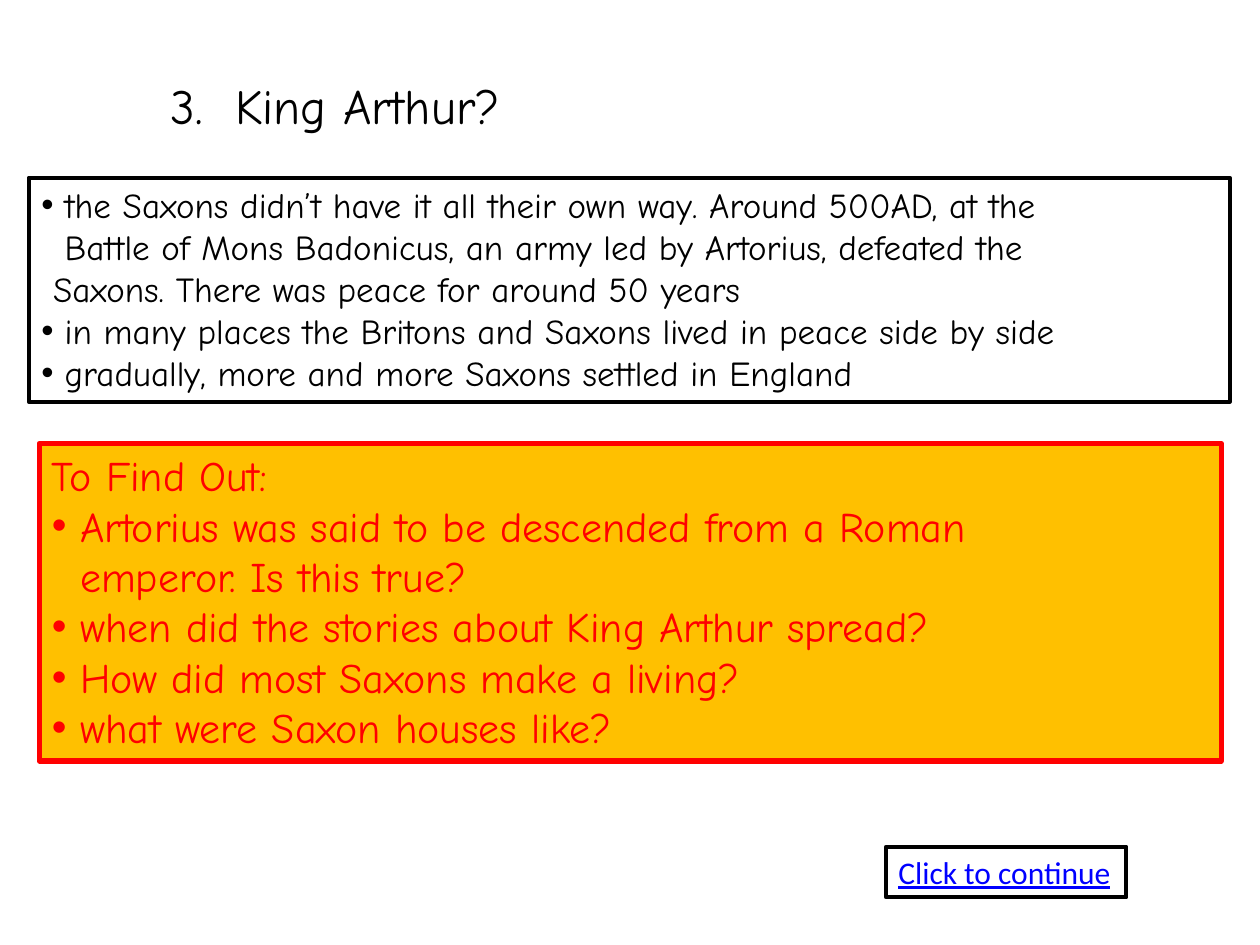
from dataclasses import dataclass
from typing import Optional

from lxml import etree
from pptx import Presentation
from pptx.dml.color import RGBColor
from pptx.enum.text import MSO_ANCHOR, MSO_AUTO_SIZE, PP_ALIGN
from pptx.oxml.ns import qn
from pptx.util import Cm, Pt

TOP = MSO_ANCHOR.TOP
FIXED = MSO_AUTO_SIZE.NONE
LEFT = PP_ALIGN.LEFT


@dataclass(frozen=True)
class Theme:
    hand: str = "Comic Neue"
    plain: str = "Calibri"
    mark: str = "Arial"
    black: str = "000000"
    red: str = "FF0000"
    gold: str = "FFC000"
    blue: str = "0000FF"
    title: int = 28
    facts: int = 20
    tasks: int = 24
    button: int = 18


THEME = Theme()


@dataclass(frozen=True)
class Line:
    text: str
    indent: float = 0
    bullet: bool = False


@dataclass(frozen=True)
class Box:
    left: float
    top: float
    width: float
    height: float
    size: int
    color: str
    lines: tuple[Line, ...]
    font: str = THEME.hand
    fill: Optional[str] = None
    edge: Optional[str] = None
    weight: float = 2.25
    wrap: bool = True
    under: bool = False


def points(indent: float, *texts: str) -> tuple[Line, ...]:
    return tuple(Line(text, indent, True) for text in texts)


FACT = 0.47
TASK = 0.57

TITLE = Box(3.18, 1.4, 16.08, 1.45, THEME.title, THEME.black,
            (Line("3.  King Arthur?"),))
FACTS = Box(
    0.58, 3.58, 24.21, 4.52, THEME.facts, THEME.black,
    (
        *points(FACT, "the Saxons didn’t have it all their own way. "
                      "Around 500AD, at the"),
        Line("Battle of Mons Badonicus, an army led by Artorius, "
             "defeated the", FACT),
        Line("Saxons. There was peace for around 50 years", FACT / 2),
        *points(FACT,
                "in many places the Britons and Saxons lived in peace "
                "side by side",
                "gradually, more and more Saxons settled in England"),
    ),
    edge=THEME.black,
)
TASKS = Box(
    0.79, 8.94, 23.83, 6.4, THEME.tasks, THEME.red,
    (
        Line("To Find Out:"),
        *points(TASK, "Artorius was said to be descended from a Roman"),
        Line("emperor. Is this true?", TASK),
        *points(TASK,
                "when did the stories about King Arthur spread?",
                "How did most Saxons make a living?",
                "what were Saxon houses like?"),
    ),
    fill=THEME.gold, edge=THEME.red, weight=3,
)
BUTTON = Box(17.86, 17.07, 4.85, 1.02, THEME.button, THEME.blue,
             (Line("Click to continue"),), font=THEME.plain,
             edge=THEME.black, wrap=False, under=True)


def indent(para, line: Line) -> None:
    """Set the hanging indent and the bullet, or switch the bullet off."""
    props = para._p.get_or_add_pPr()
    props.set("marL", str(Cm(line.indent)))
    props.set("indent", str(-Cm(line.indent) if line.bullet else 0))
    if line.bullet:
        etree.SubElement(props, qn("a:buFont")).set("typeface", THEME.mark)
        etree.SubElement(props, qn("a:buChar")).set("char", "•")
    else:
        etree.SubElement(props, qn("a:buNone"))


def write(frame, box: Box) -> None:
    frame.word_wrap = box.wrap
    frame.auto_size = FIXED
    frame.vertical_anchor = TOP
    for num, line in enumerate(box.lines):
        para = frame.add_paragraph() if num else frame.paragraphs[0]
        para.alignment = LEFT
        para.space_before = Pt(0)
        indent(para, line)
        run = para.add_run()
        run.text = line.text
        run.font.name = box.font
        run.font.size = Pt(box.size)
        run.font.color.rgb = RGBColor.from_string(box.color)
        if box.under:
            run.font.underline = True


def draw(shape, box: Box) -> None:
    shape.left, shape.top = Cm(box.left), Cm(box.top)
    shape.width, shape.height = Cm(box.width), Cm(box.height)
    if box.fill:
        shape.fill.solid()
        shape.fill.fore_color.rgb = RGBColor.from_string(box.fill)
    if box.edge:
        shape.line.color.rgb = RGBColor.from_string(box.edge)
        shape.line.width = Pt(box.weight)
    write(shape.text_frame, box)


def main() -> None:
    deck = Presentation()
    deck.slide_width, deck.slide_height = Cm(25.4), Cm(19.05)
    slide = deck.slides.add_slide(deck.slide_layouts.get_by_name("Two Content"))
    for shape, box in zip(slide.placeholders, (TITLE, FACTS, TASKS)):
        draw(shape, box)
    draw(slide.shapes.add_textbox(0, 0, 0, 0), BUTTON)
    deck.save("out.pptx")


if __name__ == "__main__":
    main()
